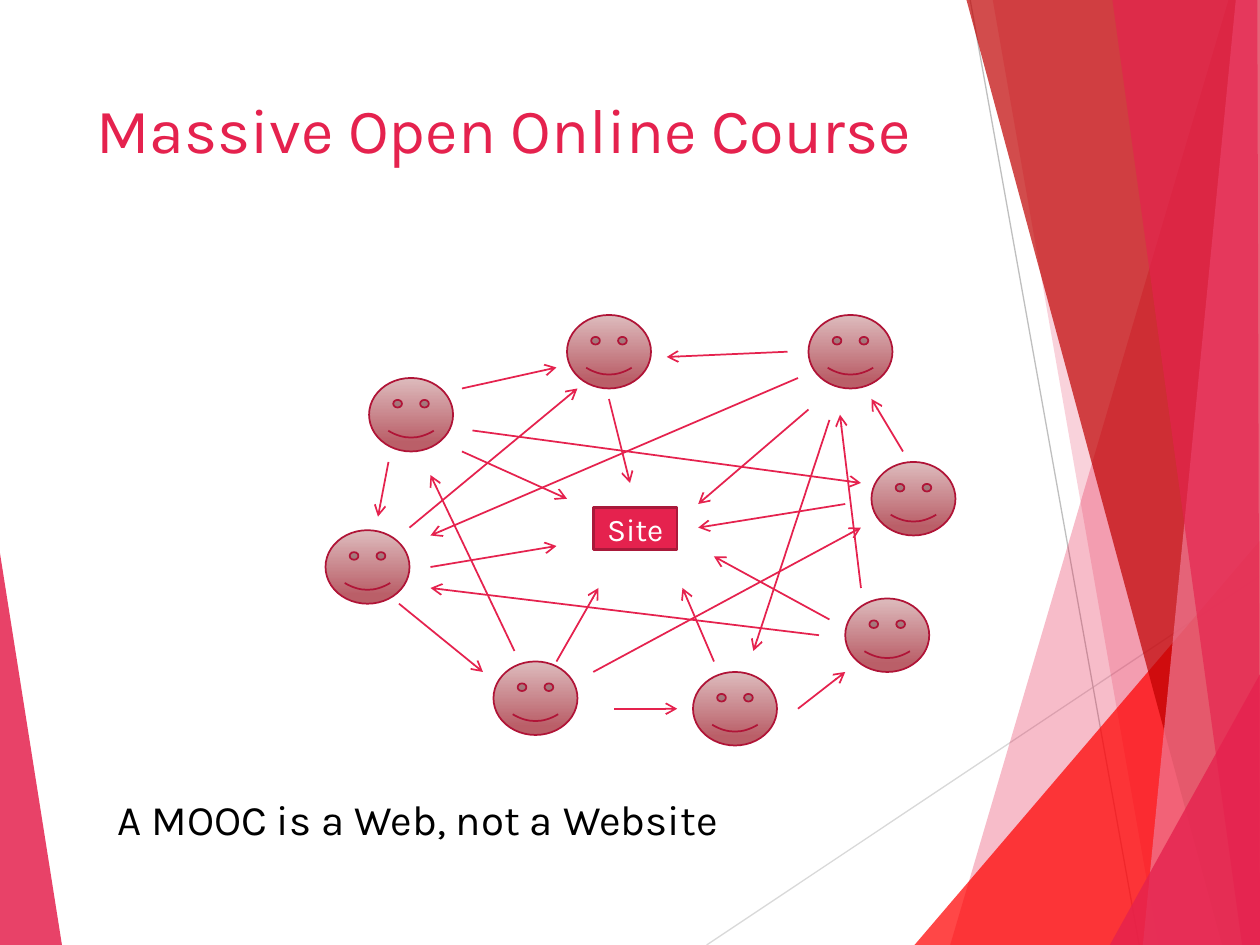
from dataclasses import dataclass

from lxml.etree import SubElement
from pptx import Presentation
from pptx.dml.color import RGBColor
from pptx.enum.shapes import MSO_CONNECTOR as Connector, MSO_SHAPE as Preset
from pptx.enum.text import MSO_ANCHOR as Anchor, MSO_AUTO_SIZE as AutoSize, PP_ALIGN as Align
from pptx.oxml.ns import qn
from pptx.util import Inches, Pt

COLUMNS, ROWS = 240, 180  # grid of 24 cells to the inch
FACE_SIZE = (16, 14)


@dataclass(frozen=True)
class Theme:
    font: str = "Karla"
    accent: str = "E5224E"
    accent_edge: str = "A9193A"
    face_edge: str = "B01437"
    face_top: str = "DDBBBD"
    face_bottom: str = "BA5F68"
    pink: str = "EF7A95"
    red: str = "FF0000"
    dark_red: str = "BF0000"
    pale_gray: str = "D9D9D9"
    gray: str = "BFBFBF"
    black: str = "000000"
    white: str = "FFFFFF"
    title_size: int = 36
    caption_size: int = 24
    label_size: int = 18


THEME = Theme()

# Corner points, colour and opacity in percent, from back to front
FACETS = [
    ([(0, 105.4), (11.8, ROWS), (0, ROWS)], THEME.accent, 85),
    ([(234, 0), (181, ROWS), (COLUMNS, ROWS), (COLUMNS, 0)], THEME.accent, 30),
    ([(189.1, 0), (220.6, ROWS), (COLUMNS, ROWS), (COLUMNS, 0)], THEME.accent, 20),
    ([(174.2, ROWS), (COLUMNS, 103), (COLUMNS, ROWS)], THEME.red, 72),
    ([(184.1, 0), (232.8, ROWS), (COLUMNS, ROWS), (COLUMNS, 0)], THEME.dark_red, 70),
    ([(235.4, 0), (217.7, ROWS), (COLUMNS, ROWS), (COLUMNS, 0)], THEME.pink, 70),
    ([(211.9, 0), (236.6, ROWS), (COLUMNS, ROWS), (239.5, 0)], THEME.accent, 65),
    ([(211.4, ROWS), (COLUMNS, 128.4), (COLUMNS, ROWS)], THEME.accent, 80),
]

FACES = [(166, 88), (161, 114), (154, 60), (132, 128),
         (94, 126), (62, 101), (70.3, 72), (108, 60)]

ARROWS_TO_SITE = [
    ((154, 78), (133, 96)), ((161, 96), (133, 100.5)),
    ((158, 118), (136, 106)), ((136, 126), (130, 112)),
    ((116, 76), (120, 92)), ((88, 86), (108, 95)),
    ((82, 108), (106, 104)), ((106, 126), (114, 112)),
]
ARROWS_BETWEEN_FACES = [
    ((90, 82), (164, 92)), ((152, 72), (82, 102)),
    ((88, 74), (106, 70)), ((158, 80), (143.5, 124)),
    ((113, 128), (164, 100.5)), ((78, 100.5), (110, 74)),
    ((164, 112), (160, 79)), ((172, 86), (166, 76)),
    ((150, 67), (127, 68)), ((74, 88), (72, 98.4)),
    ((98, 124), (82, 90.5)), ((117, 135), (129, 135)),
    ((156, 121), (82, 112)), ((76, 115), (92, 128)),
    ((152, 135), (161, 128)),
]


def cells(*counts):
    """Turn counts of grid cells into lengths."""
    return [Inches(count / 24) for count in counts]


def color(value):
    return RGBColor.from_string(value)


def set_text(shape, text, size, text_color, align=Align.LEFT, anchor=Anchor.TOP):
    frame = shape.text_frame
    frame.text = text
    frame.word_wrap = True
    frame.auto_size = AutoSize.NONE
    frame.vertical_anchor = anchor
    paragraph = frame.paragraphs[0]
    paragraph.alignment = align
    font = paragraph.runs[0].font
    font.name, font.size = THEME.font, Pt(size)
    font.color.rgb = color(text_color)


def set_line(shape, line_color, width):
    shape.line.color.rgb = color(line_color)
    shape.line.width = Pt(width)


def add_facet(slide, points, fill_color, opacity):
    start, *others = [cells(*point) for point in points]
    builder = slide.shapes.build_freeform(*start)
    builder.add_line_segments(others, close=True)
    shape = builder.convert_to_shape()
    shape.shadow.inherit = False
    shape.line.fill.background()
    shape.fill.solid()
    shape.fill.fore_color.rgb = color(fill_color)
    solid = shape.fill._xPr.find(qn("a:solidFill"))
    SubElement(solid[0], qn("a:alpha"), val=str(opacity * 1000))


def add_line(slide, start, end, line_color, width, arrow=False):
    line = slide.shapes.add_connector(Connector.STRAIGHT, *cells(*start, *end))
    set_line(line, line_color, width)
    if arrow:
        SubElement(line.line._get_or_add_ln(), qn("a:tailEnd"), type="arrow")
    SubElement(line._element.spPr, qn("a:effectLst"))


def add_face(slide, position):
    face = slide.shapes.add_shape(Preset.SMILEY_FACE, *cells(*position, *FACE_SIZE))
    face.shadow.inherit = False
    set_line(face, THEME.face_edge, 1)
    face.fill.gradient()
    face.fill.gradient_angle = 270
    stops = ((0, THEME.face_top), (0.88, THEME.face_bottom))
    for stop, (position, stop_color) in zip(face.fill.gradient_stops, stops):
        stop.position = position
        stop.color.rgb = color(stop_color)


def add_site(slide):
    site = slide.shapes.add_shape(Preset.RECTANGLE, *cells(113, 96.7, 16, 8))
    site.shadow.inherit = False
    site.fill.solid()
    site.fill.fore_color.rgb = color(THEME.accent)
    set_line(site, THEME.accent_edge, 1.5)
    set_text(site, "Site", THEME.label_size, THEME.white, Align.CENTER, Anchor.MIDDLE)


def add_title(slide):
    title = slide.shapes.title
    title.left, title.top, title.width, title.height = cells(16, 16, 166.6, 34.6)
    set_text(title, "Massive Open Online Course", THEME.title_size, THEME.accent)


def add_caption(slide):
    caption = slide.shapes.add_textbox(*cells(20, 150, 180, 12))
    set_text(caption, "A MOOC is a Web, not a Website", THEME.caption_size, THEME.black)


def add_backdrop(slide):
    left_wedge, *right_facets = FACETS
    add_facet(slide, *left_wedge)
    add_line(slide, (134.6, ROWS), (COLUMNS, 109.7), THEME.pale_gray, 0.75)
    add_line(slide, (184.8, 0), (217, ROWS), THEME.gray, 0.75)
    for facet in right_facets:
        add_facet(slide, *facet)


def main():
    presentation = Presentation()
    presentation.slide_width, presentation.slide_height = cells(COLUMNS, ROWS)
    slide = presentation.slides.add_slide(presentation.slide_layouts[5])
    add_backdrop(slide)
    add_title(slide)
    add_site(slide)
    for position in FACES:
        add_face(slide, position)
    for start, end in ARROWS_TO_SITE + ARROWS_BETWEEN_FACES:
        add_line(slide, start, end, THEME.accent, 1, arrow=True)
    add_caption(slide)
    presentation.save("out.pptx")


if __name__ == "__main__":
    main()
